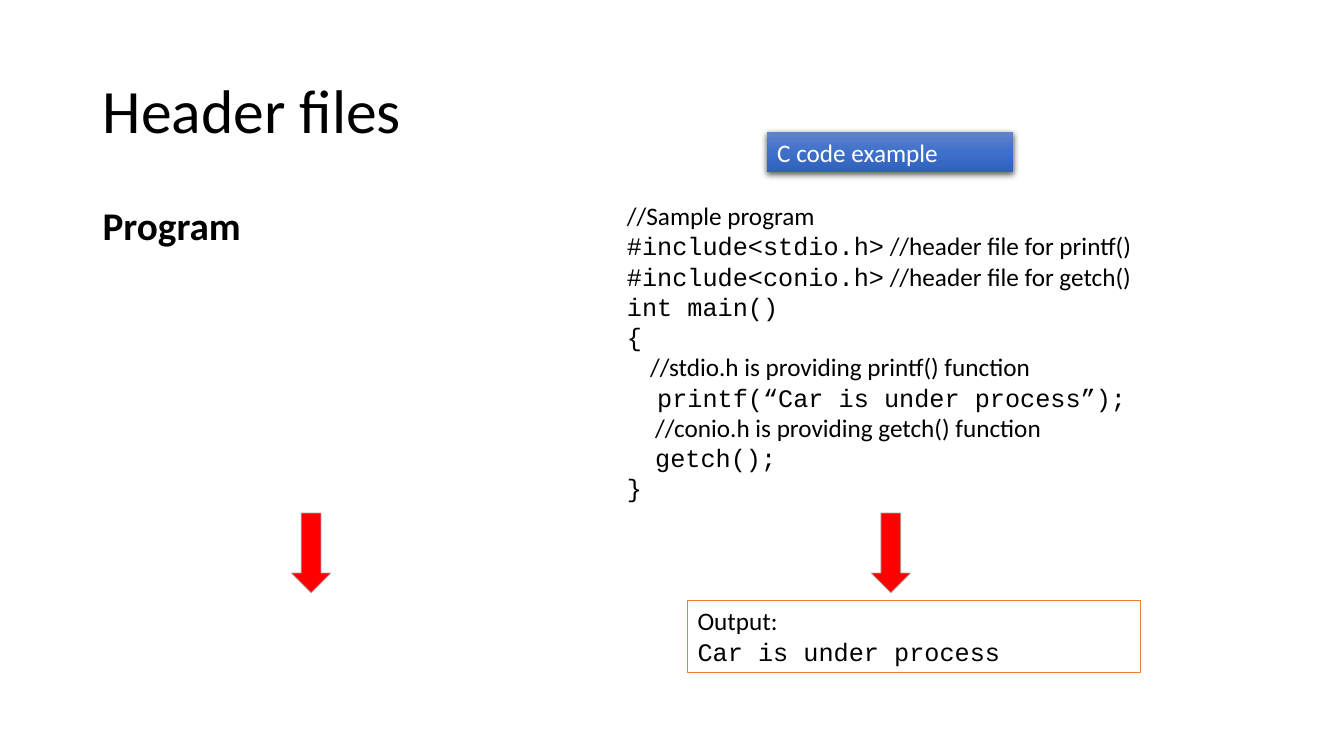
from dataclasses import dataclass

from lxml import etree
from pptx import Presentation
from pptx import util as u
from pptx.dml.color import RGBColor
from pptx.enum import shapes, text
from pptx.oxml import ns

PX = 9144  # EMU in one px, 100 px to the inch


@dataclass(frozen=True)
class Theme:
    sans: str = "Calibri"
    mono: str = "Courier New"
    black: str = "000000"
    white: str = "FFFFFF"
    red: str = "FF0000"
    gray: str = "A5A5A5"
    orange: str = "ED7D31"
    blues: tuple = ("6183CB", "3E70CA", "3062BB")
    title: int = 44
    head: int = 28
    code: int = 18


class Page:
    def __init__(self, deck, theme):
        self.theme = theme
        self.shapes = deck.slides.add_slide(deck.slide_layouts[6]).shapes

    def letter(self, shape, lines, size, color=None, bold=False, grow=True,
               anchor=text.MSO_ANCHOR.TOP, **form):
        """Each line is (indent in px, [(text, font), ...])."""
        frame = shape.text_frame
        looks = {"word_wrap": True, "vertical_anchor": anchor}
        if grow:
            looks["auto_size"] = text.MSO_AUTO_SIZE.SHAPE_TO_FIT_TEXT
        for key, value in looks.items():
            setattr(frame, key, value)
        for i, (indent, parts) in enumerate(lines):
            para = frame.add_paragraph() if i else frame.paragraphs[0]
            for key, value in {"alignment": text.PP_ALIGN.LEFT, **form}.items():
                setattr(para, key, value)
            if indent:
                para._p.get_or_add_pPr().set("marL", str(indent * PX))
            for words, face in parts:
                run = para.add_run()
                run.text = words
                for key, value in {"name": face, "size": u.Pt(size), "bold": bold}.items():
                    setattr(run.font, key, value)
                run.font.color.rgb = RGBColor.from_string(color or self.theme.black)

    def label(self, box, lines, size, **form):
        self.letter(self.shapes.add_textbox(*(n * PX for n in box)), lines, size, **form)

    def block(self, kind, box, fill=None, line=None, width=1):
        shape = self.shapes.add_shape(kind, *(n * PX for n in box))
        shape.shadow.inherit = False
        if fill:
            shape.fill.solid()
            shape.fill.fore_color.rgb = RGBColor.from_string(fill)
        if line:
            shape.line.color.rgb = RGBColor.from_string(line)
            shape.line.width = u.Pt(width)
        else:
            shape.line.fill.background()
        return shape

    def arrow(self, left, top):
        self.block(shapes.MSO_SHAPE.DOWN_ARROW, (left, top, 39, 79),
                   self.theme.red, self.theme.gray, 0.5)

    def badge(self, box):
        """Rectangle with a downward gradient and a soft shadow."""
        shape = self.block(shapes.MSO_SHAPE.RECTANGLE, box)
        shape.fill.gradient()
        shape.fill.gradient_angle = 270
        props = shape._element.spPr
        stops = props.find(".//" + ns.qn("a:gsLst"))
        for stop in list(stops):
            stops.remove(stop)
        for i, color in enumerate(self.theme.blues):
            stop = etree.SubElement(stops, ns.qn("a:gs"), pos=str(i * 50000))
            etree.SubElement(stop, ns.qn("a:srgbClr"), val=color)
        cast = etree.SubElement(props.find(ns.qn("a:effectLst")), ns.qn("a:outerShdw"),
                                blurRad=str(u.Pt(4.5)), dist=str(u.Pt(1.5)),
                                dir="5400000", algn="ctr", rotWithShape="0")
        tint = etree.SubElement(cast, ns.qn("a:srgbClr"), val=self.theme.black)
        etree.SubElement(tint, ns.qn("a:alpha"), val="63000")
        return shape


def main():
    deck = Presentation()
    deck.slide_width, deck.slide_height = u.Inches(13.33), u.Inches(7.5)
    theme = Theme()
    page = Page(deck, theme)
    sans, mono = theme.sans, theme.mono

    # Title and heading
    page.label((92, 40, 1150, 145), [(0, [("Header files", sans)])], theme.title,
               grow=False, anchor=text.MSO_ANCHOR.MIDDLE, line_spacing=0.9)
    page.label((92, 200, 1150, 476), [(0, [("Program", sans)])], theme.head,
               bold=True, grow=False, line_spacing=0.9, space_before=u.Pt(10))

    # Sample code
    code = [
        (0, [("//Sample program", sans)]),
        (0, [("#include<stdio.h>", mono), (" //header file for printf()", sans)]),
        (0, [("#include<conio.h>", mono), (" //header file for getch()", sans)]),
        (0, [("int main()", mono)]),
        (0, [("{", mono)]),
        (23, [("//stdio.h is providing printf() function", sans)]),
        (30, [("printf(“Car is under process”);", mono)]),
        (28, [("//conio.h is providing getch() function", sans)]),
        (28, [("getch();", mono)]),
        (0, [("}", mono)]),
    ]
    page.label((612, 194, 543, 313), code, theme.code)
    page.letter(page.badge((761, 131, 244, 40)), [(0, [("C code example", sans)])],
                theme.code, theme.white)

    # Arrows down to the result
    for left in (289, 864):
        page.arrow(left, 509)

    # Output
    result = page.block(shapes.MSO_SHAPE.RECTANGLE, (682, 596, 449, 71),
                        theme.white, theme.orange)
    page.letter(result, [(0, [("Output:", sans)]), (0, [("Car is under process", mono)])],
                theme.code)

    deck.save("out.pptx")


if __name__ == "__main__":
    main()
